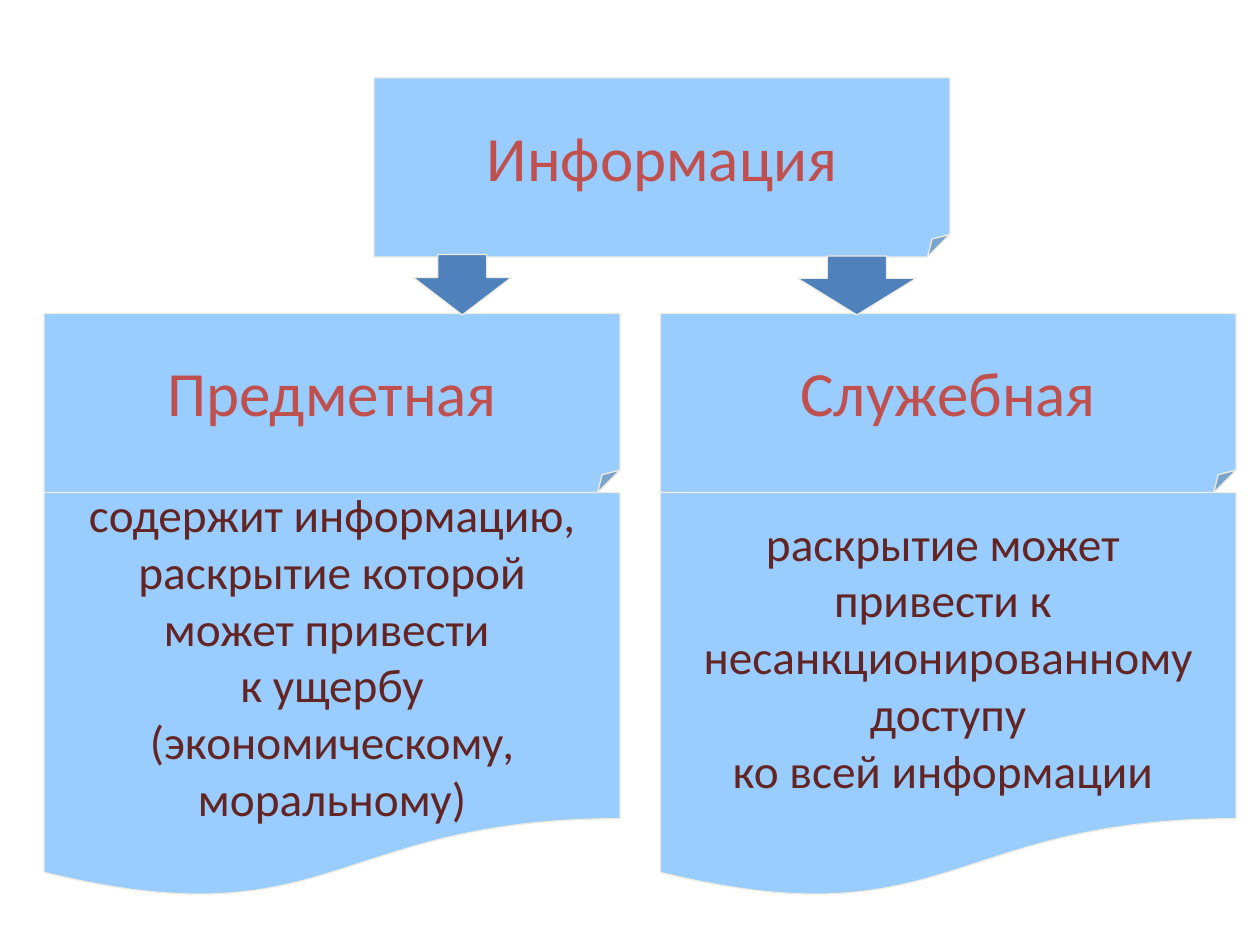
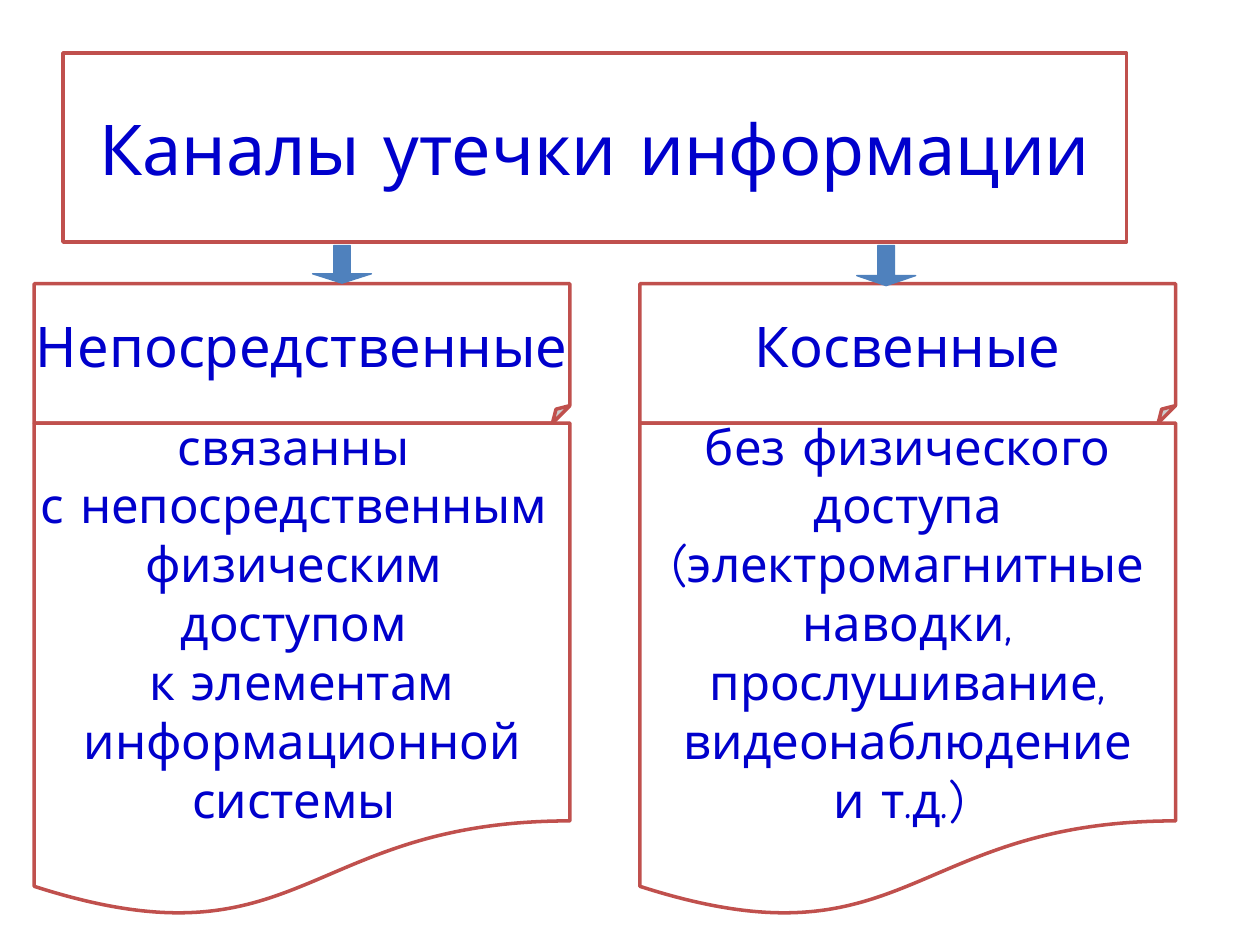
from dataclasses import dataclass

from lxml import etree
from pptx import Presentation
from pptx.dml.color import RGBColor
from pptx.enum import shapes, text
from pptx.oxml import ns
from pptx.util import Cm, Pt

SKY = RGBColor(0x99, 0xCC, 0xFF)
CREAM = RGBColor(0xEE, 0xEC, 0xE1)
RED = RGBColor(0xC0, 0x50, 0x4D)
MAROON = RGBColor(0x63, 0x25, 0x23)
STEEL = RGBColor(0x4F, 0x81, 0xBD)
INK = RGBColor(0x00, 0x00, 0xCC)
WHITE = RGBColor(0xFF, 0xFF, 0xFF)

RECTANGLE = shapes.MSO_SHAPE.RECTANGLE
FOLDED = shapes.MSO_SHAPE.FOLDED_CORNER
DOCUMENT = shapes.MSO_SHAPE.FLOWCHART_DOCUMENT
ARROW = shapes.MSO_SHAPE.DOWN_ARROW


@dataclass
class Style:
    """Look shared by all elements of one slide."""
    font: str
    fill: RGBColor
    line: RGBColor
    line_width: float
    heading_color: RGBColor
    heading_size: int
    body_color: RGBColor
    body_size: int
    arrow_line: RGBColor
    arrow_adjustments: tuple


SKY_STYLE = Style("Calibri", SKY, CREAM, 0.75, RED, 36, MAROON, 27, CREAM, (0.5, 0.62))
OUTLINE_STYLE = Style("Comic Neue", WHITE, RED, 2, INK, 32, INK, 28, STEEL, (0.28, 0.25))


def add_block(slide, kind, box, fill, line, line_width):
    shape = slide.shapes.add_shape(kind, *(Cm(value) for value in box))
    shape.shadow.inherit = False
    shape.fill.solid()
    shape.fill.fore_color.rgb = fill
    shape.line.color.rgb = line
    shape.line.width = Pt(line_width)
    return shape


def set_fold(shape):
    """Make the folded corner an eighth of the height; python-pptx has no handle for it."""
    guides = next(shape.element.iter(ns.qn("a:avLst")))
    etree.SubElement(guides, ns.qn("a:gd"), name="adj", fmla="val 12500")


def add_text_block(slide, kind, box, lines, style, size, color):
    """Block with one centred paragraph for each line."""
    shape = add_block(slide, kind, box, style.fill, style.line, style.line_width)
    if kind == FOLDED:
        set_fold(shape)
    frame = shape.text_frame
    frame.word_wrap = False
    frame.vertical_anchor = text.MSO_ANCHOR.MIDDLE
    for index, line in enumerate(lines):
        paragraph = frame.add_paragraph() if index else frame.paragraphs[0]
        paragraph.alignment = text.PP_ALIGN.CENTER
        run = paragraph.add_run()
        run.text = line
        run.font.name = style.font
        run.font.size = Pt(size)
        run.font.color.rgb = color


def add_heading(slide, kind, box, words, style, size=None):
    add_text_block(slide, kind, box, [words], style,
                   size or style.heading_size, style.heading_color)


def add_column(slide, left, top, width, heading_height, body_height, heading, lines, style):
    """Folded heading with a document-shaped explanation under it."""
    add_heading(slide, FOLDED, (left, top, width, heading_height), heading, style)
    add_text_block(slide, DOCUMENT, (left, top + heading_height, width, body_height),
                   lines, style, style.body_size, style.body_color)


def add_arrow(slide, box, style):
    arrow = add_block(slide, ARROW, box, STEEL, style.arrow_line, 0.75)
    for index, value in enumerate(style.arrow_adjustments):
        arrow.adjustments[index] = value


def add_blank_slide(presentation):
    return presentation.slides.add_slide(presentation.slide_layouts[6])


def build_information_kinds(presentation):
    slide = add_blank_slide(presentation)
    style = SKY_STYLE
    add_heading(slide, FOLDED, (7.54, 1.57, 11.61, 3.61), "Информация", style)
    columns = [
        (0.89, "Предметная",
         ["содержит информацию,", "раскрытие которой", "может привести ",
          "к ущербу", "(экономическому,", "моральному)"]),
        (13.31, "Служебная",
         ["раскрытие может ", "привести к ", "несанкционированному",
          " доступу ", "ко всей информации "]),
    ]
    for left, heading, lines in columns:
        add_column(slide, left, 6.32, 11.61, 3.61, 8.2, heading, lines, style)
    add_arrow(slide, (8.33, 5.13, 1.98, 1.22), style)
    add_arrow(slide, (16.08, 5.16, 2.39, 1.19), style)


def build_leak_channels(presentation):
    slide = add_blank_slide(presentation)
    style = OUTLINE_STYLE
    add_heading(slide, RECTANGLE, (1.27, 1.07, 21.44, 3.81),
                "Каналы утечки информации", style, size=40)
    columns = [
        (0.69, "Непосредственные",
         ["связанны ", "с непосредственным ", "физическим ", "доступом ",
          "к элементам", "информационной", "системы "]),
        (12.9, "Косвенные",
         ["без физического", "доступа", "(электромагнитные", "наводки,",
          "прослушивание,", "видеонаблюдение", "и т.д.) "]),
    ]
    for left, heading, lines in columns:
        add_column(slide, left, 5.72, 10.8, 2.81, 10, heading, lines, style)
    add_arrow(slide, (6.3, 4.95, 1.19, 0.76), style)
    add_arrow(slide, (17.27, 4.95, 1.19, 0.81), style)


def main():
    presentation = Presentation()
    presentation.slide_width = Cm(25.4)
    presentation.slide_height = Cm(19.05)
    build_information_kinds(presentation)
    build_leak_channels(presentation)
    presentation.save("out.pptx")


if __name__ == "__main__":
    main()
